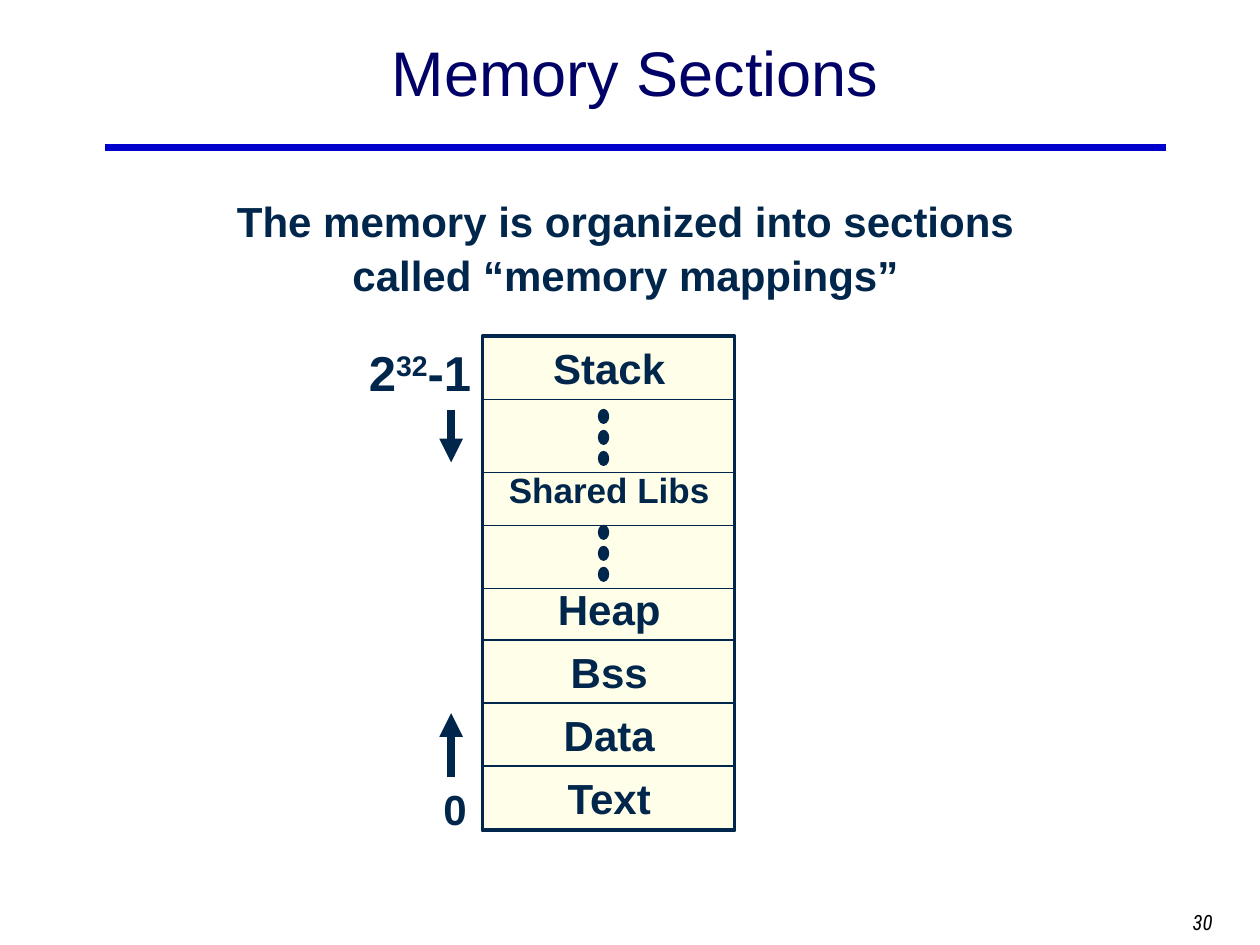
import dataclasses

import pptx
import pptx.dml.color
import pptx.enum.shapes
import pptx.enum.text
import pptx.oxml
import pptx.oxml.ns
import pptx.util
from pptx.util import Inches

SHAPES = pptx.enum.shapes.MSO_SHAPE
ALIGN = pptx.enum.text.PP_ALIGN
ANCHOR = pptx.enum.text.MSO_ANCHOR


@dataclasses.dataclass(frozen=True)
class Theme:
    ink: str = "00264C"
    title: str = "000066"
    rule: str = "0000CC"
    memory: str = "FFFFE9"
    number: str = "000000"
    font: str = "Arial"
    number_font: str = "Roboto Condensed"
    title_size: float = 36
    address_size: float = 28
    body_size: float = 24
    small_size: float = 20
    number_size: float = 12
    hairline: float = 0.75
    border: float = 2.25
    rule_width: float = 4
    arrow_width: float = 4.5


class SlideBuilder:
    """Adds styled elements to the current slide."""

    def __init__(self, slide, theme):
        self.slide = slide
        self.theme = theme

    def color(self, value):
        return pptx.dml.color.RGBColor.from_string(value)

    def style(self, frame, size, align, color=None, font=None, bold=True, italic=False):
        for paragraph in frame.paragraphs:
            paragraph.alignment = align
            for run in paragraph.runs:
                run.font.name = font or self.theme.font
                run.font.size = pptx.util.Pt(size)
                run.font.bold = bold
                run.font.italic = italic
                run.font.color.rgb = self.color(color or self.theme.ink)

    def title(self, text, left, top, width, height):
        heading = self.slide.shapes.title
        heading.left, heading.top = Inches(left), Inches(top)
        heading.width, heading.height = Inches(width), Inches(height)
        frame = heading.text_frame
        frame.text = text
        frame.vertical_anchor = ANCHOR.BOTTOM
        self.style(frame, self.theme.title_size, ALIGN.CENTER, self.theme.title, bold=False)

    def text(self, text, left, top, width, height, size, align=ALIGN.CENTER, wrap=True, **look):
        box = self.slide.shapes.add_textbox(Inches(left), Inches(top), Inches(width), Inches(height))
        frame = box.text_frame
        frame.word_wrap = wrap
        frame.text = text
        self.style(frame, size, align, **look)
        return frame

    def power(self, base, exponent, rest, left, top, width, height):
        frame = self.text(base, left, top, width, height, self.theme.address_size, ALIGN.LEFT)
        for part in (exponent, rest):
            frame.paragraphs[0].add_run().text = part
        self.style(frame, self.theme.address_size, ALIGN.LEFT)
        frame.paragraphs[0].runs[1].font._element.set("baseline", "30000")

    def shape(self, kind, left, top, width, height, fill, line_width):
        shape = self.slide.shapes.add_shape(
            kind, Inches(left), Inches(top), Inches(width), Inches(height))
        shape.shadow.inherit = False
        shape.fill.solid()
        shape.fill.fore_color.rgb = self.color(fill)
        shape.line.color.rgb = self.color(self.theme.ink)
        shape.line.width = pptx.util.Pt(line_width)

    def line(self, start, end, color, width, arrow=False):
        line = self.slide.shapes.add_connector(
            pptx.enum.shapes.MSO_CONNECTOR.STRAIGHT, *map(Inches, (*start, *end)))
        line.line.color.rgb = self.color(color)
        line.line.width = pptx.util.Pt(width)
        if arrow:
            head = pptx.oxml.parse_xml(
                f'<a:tailEnd {pptx.oxml.ns.nsdecls("a")} type="triangle"/>')
            line.line._get_or_add_ln().append(head)
        line._element.spPr.append(
            pptx.oxml.parse_xml(f'<a:effectLst {pptx.oxml.ns.nsdecls("a")}/>'))


def main():
    theme = Theme()
    deck = pptx.Presentation()
    deck.slide_width, deck.slide_height = Inches(10), Inches(7.5)
    page = SlideBuilder(deck.slides.add_slide(deck.slide_layouts[5]), theme)

    page.line((0.83, 1.17), (9.25, 1.17), theme.rule, theme.rule_width)
    page.title("Memory Sections", 0.83, 0.17, 8.42, 0.75)
    page.text("30", 8.67, 7.17, 1.75, 0.5, theme.number_size,
              color=theme.number, font=theme.number_font, bold=False, italic=True)
    summary = page.text("The memory is organized into sections\ncalled “memory mappings”",
                        1.75, 1.5, 6.43, 0.91, theme.body_size, wrap=False)
    summary.paragraphs[1].space_before = pptx.util.Pt(2)

    memory_left, memory_top, memory_width, memory_height = 3.83, 2.67, 2, 3.92
    page.shape(SHAPES.RECTANGLE, memory_left, memory_top, memory_width, memory_height,
               theme.memory, theme.border)
    for boundary in (3.17, 3.75, 4.17, 4.67, 5.08, 5.58, 6.08):
        page.line((memory_left, boundary), (memory_left + memory_width, boundary),
                  theme.ink, theme.hairline)

    sections = [("Stack", memory_top), ("Heap", 4.58), ("Bss", 5.08), ("Data", 5.58), ("Text", 6.08)]
    for name, top in sections:
        page.text(name, 3.92, top, 1.83, 0.5, theme.body_size)
    page.text("Shared Libs", 3.92, 3.67, 1.83, 0.44, theme.small_size)

    for gap_top in (3.25, 4.17):
        for dot in range(3):
            page.shape(SHAPES.OVAL, 4.75, gap_top + dot / 6, 0.08, 0.11, theme.ink, theme.hairline)

    page.power("2", "32", "-1", 2.83, 2.67, 1.5, 0.57)
    page.text("0", 3.42, 6.17, 0.5, 0.5, theme.body_size, ALIGN.LEFT)
    for start, end in ((3.25, 3.67), (6.17, 5.66)):
        page.line((3.58, start), (3.58, end), theme.ink, theme.arrow_width, arrow=True)

    deck.save("out.pptx")


if __name__ == "__main__":
    main()
